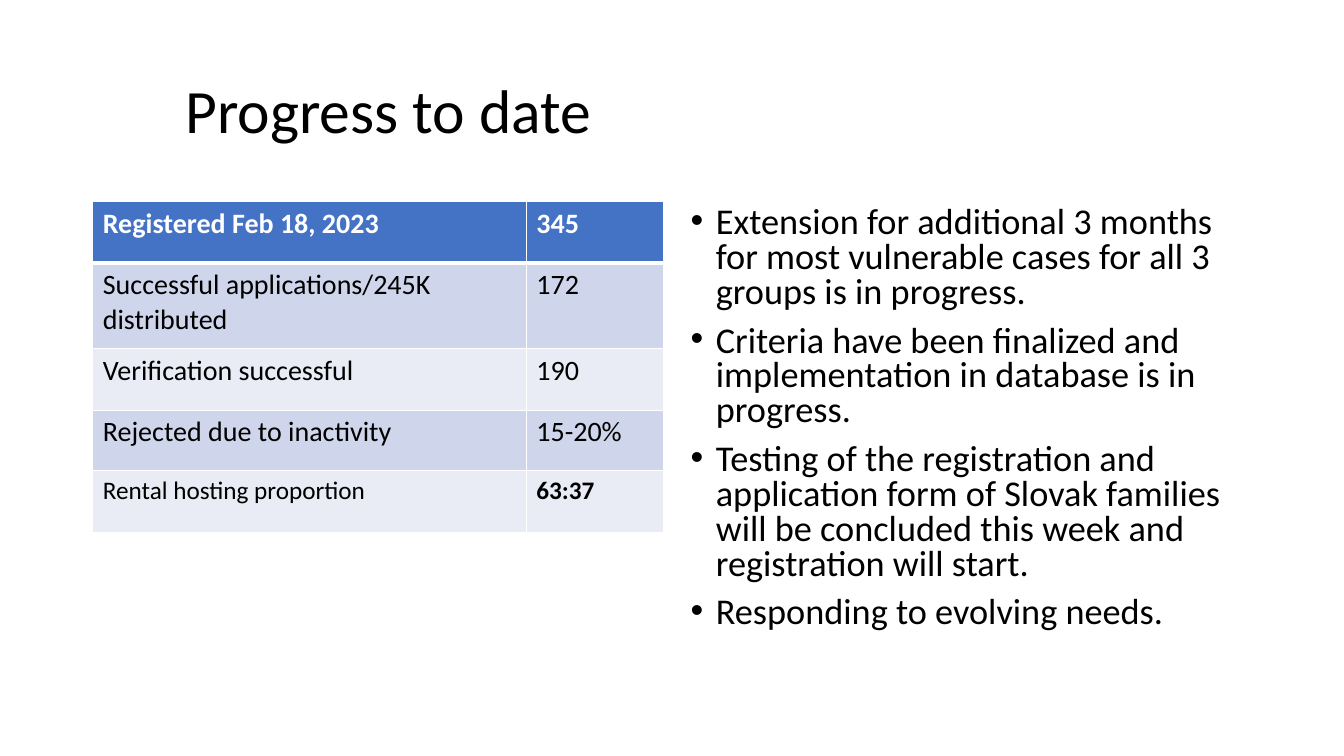
from lxml.etree import SubElement as Sub
from pptx import Presentation
from pptx.dml.color import RGBColor as Rgb
from pptx.enum.text import MSO_ANCHOR as Anchor, MSO_AUTO_SIZE as Auto, PP_ALIGN as Align
from pptx.oxml.ns import qn
from pptx.util import Inches, Pt

WIDE, HIGH = 13.33, 7.5
FONT = "Calibri"
HUES = {"ink": "000000", "white": "FFFFFF", "head": "4472C4",
        "dark": "CFD5EA", "light": "E9EBF5"}
LEFT, TOP, HALF, GAP = 0.92, 2, 5.67, 0.16
COLS = (4.3, 1.36)
ROWS = (0.61, 0.85, 0.61, 0.6, 0.61)
FACTS = [
    ("Registered Feb 18, 2023", "345"),
    ("Successful applications/245K distributed", "172"),
    ("Verification successful", "190"),
    ("Rejected due to inactivity", "15-20%"),
    ("Rental hosting proportion", "63:37"),
]
POINTS = [
    "Extension for additional 3 months for most vulnerable cases for all 3 groups is in progress.",
    "Criteria have been finalized and implementation in database is in progress.",
    "Testing of the registration and application form of Slovak families "
    "will be concluded this week and registration will start.",
    "Responding to evolving needs.",
]


def write(para, text, size, hue="ink", bold=False):
    """Add one formatted run to a paragraph."""
    run = para.add_run()
    run.text = text
    font = run.font
    font.name, font.size, font.bold = FONT, Pt(size), bold
    font.color.rgb = Rgb.from_string(HUES[hue])


def place(shape, box):
    """Move a placeholder to a box and return its text frame."""
    shape.left, shape.top, shape.width, shape.height = map(Inches, box)
    frame = shape.text_frame
    frame.word_wrap, frame.auto_size = True, Auto.NONE
    return frame


def add_title(slide, box):
    """Fill the title placeholder, set in from the left edge of its box."""
    frame = place(slide.shapes.title, box)
    frame.vertical_anchor = Anchor.MIDDLE
    frame.margin_left = Inches(0.92)
    para = frame.paragraphs[0]
    para.alignment, para.line_spacing = Align.LEFT, 0.9
    write(para, "Progress to date", 44)


def add_list(slide, box):
    """Fill the body placeholder with bullet points."""
    frame = place(slide.placeholders[1], box)
    frame.vertical_anchor = Anchor.TOP
    for i, text in enumerate(POINTS):
        para = frame.add_paragraph() if i else frame.paragraphs[0]
        para.line_spacing, para.space_before = 0.8, Pt(10)
        props = para._p.get_or_add_pPr()
        props.set("marL", str(Inches(0.25)))
        props.set("indent", str(-Inches(0.25)))
        Sub(props, qn("a:buFont")).set("typeface", "Arial")
        Sub(props, qn("a:buChar")).set("char", "•")
        write(para, text, 25.9)


def edge(cell, sides):
    """Draw white borders of the given widths on a cell."""
    props = cell._tc.get_or_add_tcPr()
    for i, (side, width) in enumerate(sides.items()):
        line = Sub(props, qn(f"a:ln{side}"), w=str(Pt(width)))
        fill = Sub(line, qn("a:solidFill"))
        Sub(fill, qn("a:srgbClr"), val=HUES["white"])
        props.insert(i, line)


def add_facts(slide, box):
    """Place the table of figures in its box."""
    frame = slide.shapes.add_table(len(ROWS), len(COLS), *map(Inches, box))
    table = frame.table
    for col, width in zip(table.columns, COLS):
        col.width = Inches(width)
    last = len(ROWS) - 1
    for r, (high, facts) in enumerate(zip(ROWS, FACTS)):
        table.rows[r].height = Inches(high)
        shade = "head" if r == 0 else "dark" if r % 2 else "light"
        for c, text in enumerate(facts):
            cell = table.cell(r, c)
            cell.fill.solid()
            cell.fill.fore_color.rgb = Rgb.from_string(HUES[shade])
            edge(cell, {"L": 1, "R": 1, "T": 3 if r == 1 else 1, "B": 1 if r else 3})
            write(cell.text_frame.paragraphs[0], text, 18 if r == last else 20,
                  "ink" if r else "white", r == 0 or (r == last and c == 1))


def main():
    """Build the slide and save it."""
    deck = Presentation()
    deck.slide_width, deck.slide_height = Inches(WIDE), Inches(HIGH)
    slide = deck.slides.add_slide(deck.slide_layouts[1])
    add_title(slide, (LEFT, 0.4, 2 * HALF + GAP, 1.45))
    add_list(slide, (LEFT + HALF + GAP, TOP, HALF, 4.76))
    add_facts(slide, (LEFT, TOP, HALF, sum(ROWS)))
    deck.save("out.pptx")


if __name__ == "__main__":
    main()
